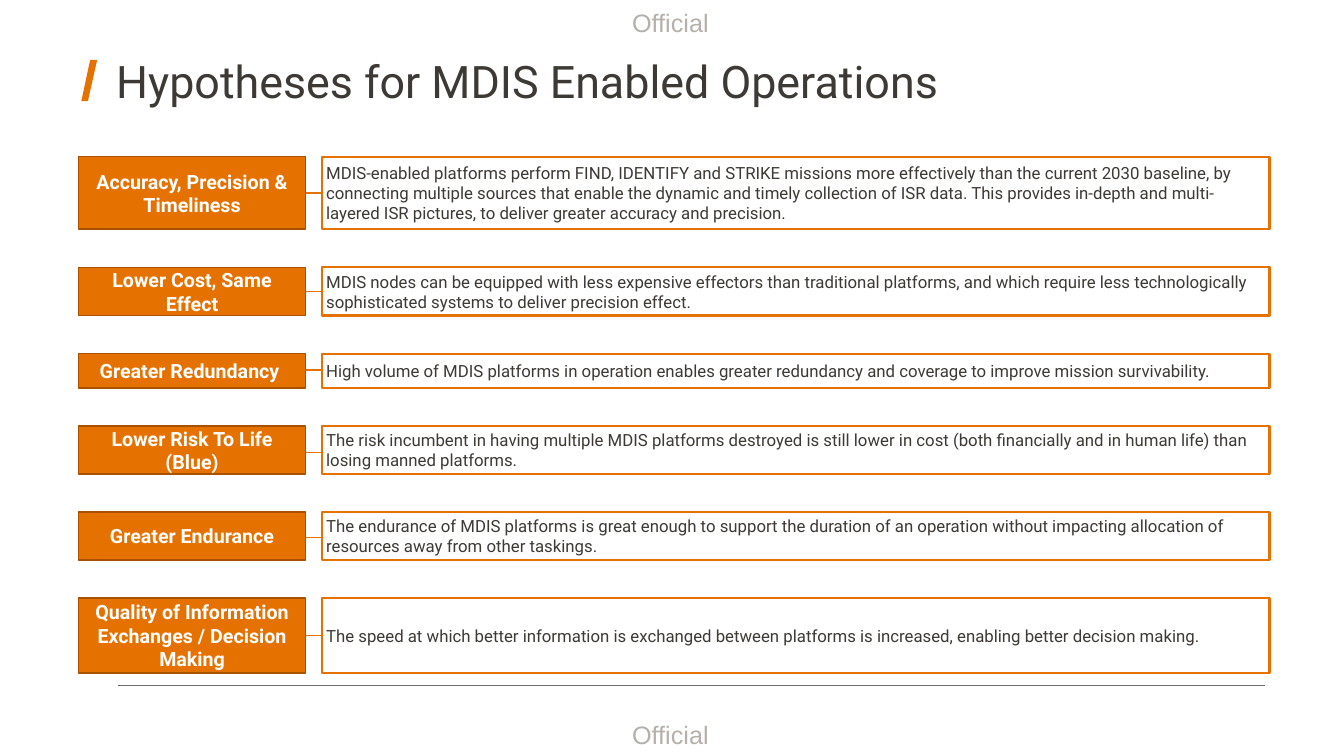
"""Build the slide of hypotheses for MDIS enabled operations."""
from dataclasses import dataclass

from lxml.etree import SubElement
from pptx import Presentation
from pptx.dml.color import RGBColor
from pptx.enum.shapes import MSO_CONNECTOR, MSO_SHAPE
from pptx.enum.text import MSO_ANCHOR, PP_ALIGN
from pptx.oxml.ns import qn
from pptx.shapes.autoshape import Shape
from pptx.slide import Slide
from pptx.util import Pt

ORANGE = RGBColor(0xE5, 0x72, 0x00)
DARK_ORANGE = RGBColor(0xA8, 0x52, 0x00)
CHARCOAL = RGBColor(0x3D, 0x39, 0x35)
RULE_GREY = RGBColor(0x71, 0x6F, 0x6D)
MARKING_GREY = RGBColor(0xB5, 0xB0, 0xAA)
WHITE = RGBColor(0xFF, 0xFF, 0xFF)

LABEL_LEFT, LABEL_WIDTH = 56.2, 162
BODY_LEFT, BODY_WIDTH = 230.1, 676.8
LINK_LEFT = 193.7
FIRST_TOP, ROW_GAP = 111.9, 27.2


@dataclass(frozen=True)
class Hypothesis:
    label: str
    statement: str
    height: float
    link_shift: float = 0


@dataclass(frozen=True)
class TextStyle:
    size: float
    color: RGBColor
    font: str = "Roboto"
    bold: bool = False
    align: PP_ALIGN = PP_ALIGN.LEFT


LABEL_STYLE = TextStyle(14, WHITE, bold=True, align=PP_ALIGN.CENTER)
STATEMENT_STYLE = TextStyle(12, CHARCOAL)
TITLE_STYLE = TextStyle(32, CHARCOAL)
MARKING_STYLE = TextStyle(18, MARKING_GREY, "Arial", align=PP_ALIGN.CENTER)

HYPOTHESES = [
    Hypothesis(
        "Accuracy, Precision & Timeliness",
        "MDIS-enabled platforms perform FIND, IDENTIFY and STRIKE missions more "
        "effectively than the current 2030 baseline, by connecting multiple sources "
        "that enable the dynamic and timely collection of ISR data. This provides "
        "in-depth and multi-layered ISR pictures, to deliver greater accuracy and "
        "precision.", 51.8),
    Hypothesis(
        "Lower Cost, Same Effect",
        "MDIS nodes can be equipped with less expensive effectors than traditional "
        "platforms, and which require less technologically sophisticated systems to "
        "deliver precision effect.", 34.5),
    Hypothesis(
        "Greater Redundancy ",
        "High volume of MDIS platforms in operation enables greater redundancy and "
        "coverage to improve mission survivability.", 24.6, -0.7),
    Hypothesis(
        "Lower Risk To Life (Blue)",
        "The risk incumbent in having multiple MDIS platforms destroyed is still lower "
        "in cost (both financially and in human life) than losing manned platforms.",
        34.2, 1.8),
    Hypothesis(
        "Greater Endurance",
        "The endurance of MDIS platforms is great enough to support the duration of an "
        "operation without impacting allocation of resources away from other taskings.",
        34.2, 0.9),
    Hypothesis(
        "Quality of Information Exchanges / Decision Making",
        "The speed at which better information is exchanged between platforms is "
        "increased, enabling better decision making.", 53.5),
]


def write(shape: Shape, text: str, style: TextStyle, inset: float,
          anchor: MSO_ANCHOR, wrap: bool = True) -> None:
    frame = shape.text_frame
    frame.text = text
    frame.word_wrap = wrap
    frame.vertical_anchor = anchor
    frame.margin_left = frame.margin_right = Pt(inset)
    frame.margin_top = frame.margin_bottom = Pt(0)
    paragraph = frame.paragraphs[0]
    paragraph.alignment = style.align
    font = paragraph.runs[0].font
    font.name, font.size, font.bold = style.font, Pt(style.size), style.bold
    font.color.rgb = style.color


def add_rule(slide: Slide, left: float, right: float, y: float,
             color: RGBColor, weight: float) -> None:
    rule = slide.shapes.add_connector(
        MSO_CONNECTOR.STRAIGHT, Pt(left), Pt(y), Pt(right), Pt(y))
    rule.line.color.rgb = color
    rule.line.width = Pt(weight)
    SubElement(rule._element.spPr, qn("a:effectLst"))


def add_box(slide: Slide, left: float, top: float, width: float, height: float,
            fill: RGBColor | None, border: RGBColor, weight: float) -> Shape:
    box = slide.shapes.add_shape(
        MSO_SHAPE.RECTANGLE, Pt(left), Pt(top), Pt(width), Pt(height))
    box.shadow.inherit = False
    if fill is None:
        box.fill.background()
    else:
        box.fill.solid()
        box.fill.fore_color.rgb = fill
    box.line.color.rgb = border
    box.line.width = Pt(weight)
    return box


def add_hypothesis(slide: Slide, row: Hypothesis, top: float) -> None:
    link_y = top + row.height / 2 + row.link_shift
    add_rule(slide, LINK_LEFT, BODY_LEFT, link_y, ORANGE, 1)
    label = add_box(slide, LABEL_LEFT, top, LABEL_WIDTH, row.height,
                    ORANGE, DARK_ORANGE, 1)
    write(label, row.label, LABEL_STYLE, 5.7, MSO_ANCHOR.MIDDLE)
    statement = add_box(slide, BODY_LEFT, top, BODY_WIDTH, row.height,
                        None, ORANGE, 1.5)
    write(statement, row.statement, STATEMENT_STYLE, 2.9, MSO_ANCHOR.MIDDLE)


def add_title(slide: Slide) -> None:
    outline = slide.shapes.build_freeform(Pt(69.4), Pt(42.7))
    outline.add_line_segments(
        [(Pt(62.8), Pt(72.2)), (Pt(58.1), Pt(72.2)), (Pt(64.4), Pt(42.7))])
    slash = outline.convert_to_shape()
    slash.shadow.inherit = False
    slash.fill.solid()
    slash.fill.fore_color.rgb = ORANGE
    slash.line.fill.background()
    title = slide.shapes.add_textbox(Pt(83), Pt(42.5), Pt(819.4), Pt(56.9))
    write(title, "Hypotheses for MDIS Enabled Operations", TITLE_STYLE, 0, MSO_ANCHOR.TOP)
    title.text_frame.paragraphs[0].line_spacing = 0.9


def add_frame(slide: Slide) -> None:
    add_rule(slide, 84.2, 903.6, 489.6, RULE_GREY, 0.5)
    for top in (1.4, 510.5):
        marking = slide.shapes.add_textbox(Pt(444), Pt(top), Pt(69.8), Pt(28.8))
        write(marking, "Official", MARKING_STYLE, 7.2, MSO_ANCHOR.MIDDLE, wrap=False)


def main() -> None:
    presentation = Presentation()
    presentation.slide_width, presentation.slide_height = Pt(960), Pt(540)
    slide = presentation.slides.add_slide(presentation.slide_layouts[6])
    add_frame(slide)
    add_title(slide)
    top = FIRST_TOP
    for row in HYPOTHESES:
        add_hypothesis(slide, row, top)
        top += row.height + ROW_GAP
    presentation.save("out.pptx")


if __name__ == "__main__":
    main()
